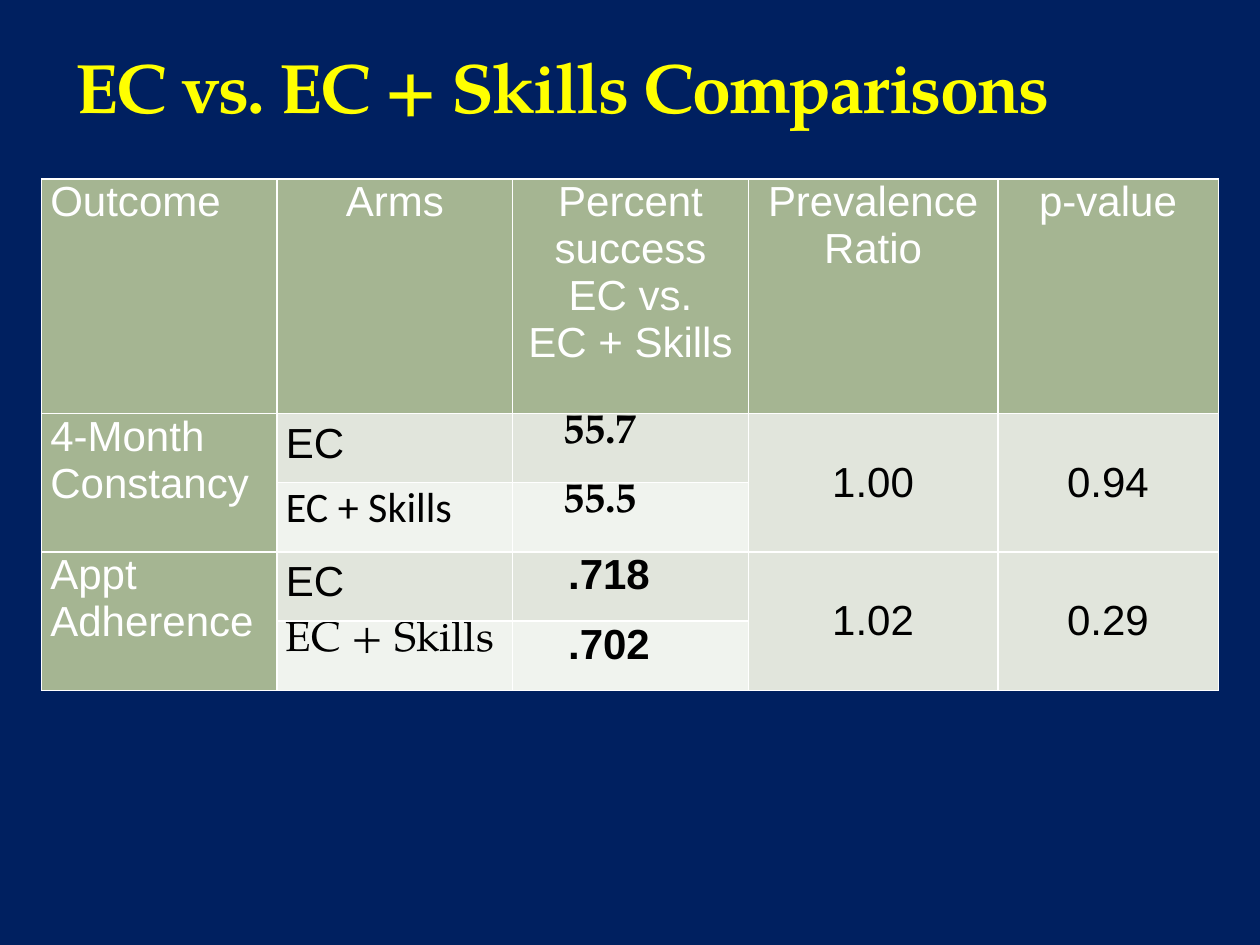
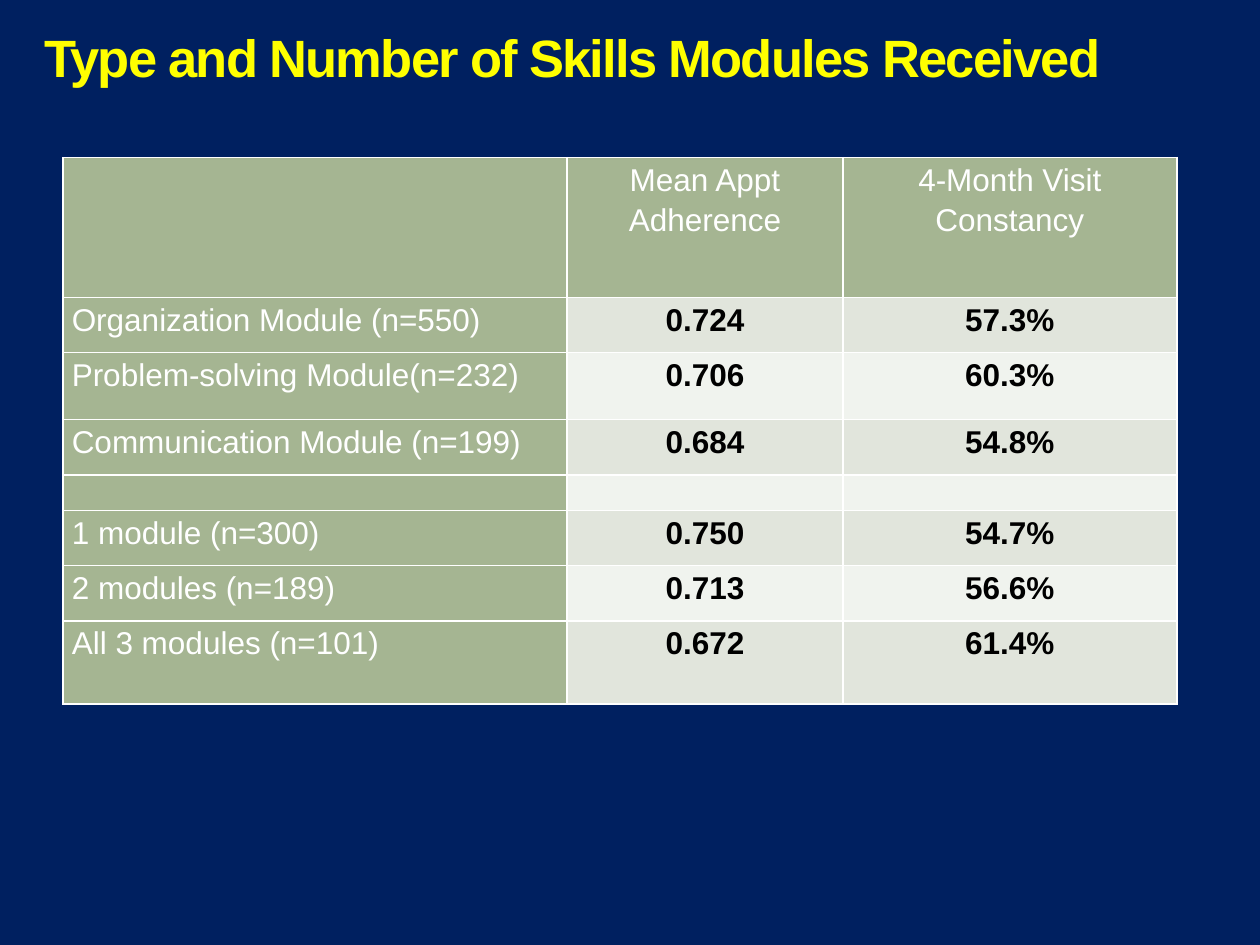
"""Build two slides of result tables on skills training and clinic visits."""
from pptx import Presentation
from pptx.dml.color import RGBColor
from pptx.enum.text import MSO_ANCHOR, MSO_AUTO_SIZE, PP_ALIGN
from pptx.util import Inches, Pt

NAVY = RGBColor(0x00, 0x20, 0x60)
YELLOW = RGBColor(0xFF, 0xFF, 0x00)
WHITE = RGBColor(0xFF, 0xFF, 0xFF)
BLACK = RGBColor(0x00, 0x00, 0x00)
SAGE = RGBColor(0xA5, 0xB5, 0x92)
BANDS = (RGBColor(0xF0, 0xF3, 0xEE), RGBColor(0xE1, 0xE5, 0xDC))
SANS, SERIF, HUMANIST = "Arial", "TeX Gyre Pagella", "Calibri"
LEFT, CENTER = PP_ALIGN.LEFT, PP_ALIGN.CENTER
TOP, MIDDLE, BOTTOM = MSO_ANCHOR.TOP, MSO_ANCHOR.MIDDLE, MSO_ANCHOR.BOTTOM
NO_AUTOFIT = MSO_AUTO_SIZE.NONE


def add_titled_slide(title_text, box, font_name, size, bottom_margin):
    slide = presentation.slides.add_slide(presentation.slide_layouts[5])
    title = slide.shapes.title
    title.left, title.top, title.width, title.height = map(Inches, box)
    frame = title.text_frame
    frame.text = title_text
    frame.word_wrap = True
    frame.auto_size = NO_AUTOFIT
    frame.vertical_anchor = BOTTOM
    frame.margin_bottom = Inches(bottom_margin)
    paragraph = frame.paragraphs[0]
    paragraph.alignment = LEFT
    font = paragraph.font
    font.name, font.size, font.bold = font_name, Pt(size), True
    font.color.rgb = YELLOW
    paragraph.runs[0].font._element.set("spc", "-100")
    return slide


def add_result_table(slide, left, top, widths, heights, rows, size, line_spacing, bold_values):
    frame = slide.shapes.add_table(len(heights), len(widths), Inches(left), Inches(top),
                                   Inches(sum(widths)), Inches(sum(heights)))
    table = frame.table
    table.first_col = True
    for column, width in zip(table.columns, widths):
        column.width = Inches(width)
    for row_index, (height, texts) in enumerate(zip(heights, rows)):
        table.rows[row_index].height = Inches(height)
        for column_index, text in enumerate(texts):
            cell = table.cell(row_index, column_index)
            is_heading = row_index == 0 or column_index == 0
            cell.text = text
            cell.margin_left = cell.margin_right = Inches(0.07)
            cell.margin_top = cell.margin_bottom = 0
            cell.vertical_anchor = TOP
            cell.fill.solid()
            cell.fill.fore_color.rgb = SAGE if is_heading else BANDS[row_index % 2]
            for paragraph in cell.text_frame.paragraphs:
                paragraph.alignment = CENTER if column_index else LEFT
                paragraph.line_spacing = line_spacing
                font = paragraph.font
                font.name, font.size = SANS, Pt(size)
                font.bold = bold_values and not is_heading
                font.color.rgb = WHITE if is_heading else BLACK
    return table


presentation = Presentation()
presentation.slide_width, presentation.slide_height = Inches(10), Inches(7.5)
background = presentation.slide_master.background.fill
background.solid()
background.fore_color.rgb = NAVY

comparison_slide = add_titled_slide("EC vs. EC + Skills Comparisons", (0.5, 0.33, 9, 0.73),
                                    SERIF, 40, 0.05)
comparison_rows = [
    ("Outcome", "Arms", "Percent success\nEC vs.\nEC + Skills", "Prevalence Ratio", "p-value"),
    ("4-Month Constancy", "EC", "55.7", "1.00", "0.94"),
    ("", "EC + Skills", "55.5", "", ""),
    ("Appt Adherence", "EC", ".718", "1.02", "0.29"),
    ("", "EC + Skills", ".702", "", ""),
]
comparison = add_result_table(comparison_slide, 0.33, 1.42, [1.87] * 3 + [1.98, 1.75],
                              [1.86] + [0.55] * 4, comparison_rows, 24, 1, False)
arm_fonts = (SANS, HUMANIST, SANS, SERIF)
percent_fonts = (SERIF, SERIF, SANS, SANS)
for row_index, (arm_font, percent_font) in enumerate(zip(arm_fonts, percent_fonts), start=1):
    arm = comparison.cell(row_index, 1).text_frame.paragraphs[0]
    arm.alignment = LEFT
    arm.font.name = arm_font
    arm.line_spacing = 1.15 if row_index % 2 else 1
    percent_cell = comparison.cell(row_index, 2)
    percent_cell.margin_left = Inches(0.4 if percent_font == SERIF else 0.44)
    percent = percent_cell.text_frame.paragraphs[0]
    percent.alignment = LEFT
    percent.font.name, percent.font.bold = percent_font, True
for row_index in (1, 3):
    for column_index in (0, 3, 4):
        cell = comparison.cell(row_index, column_index)
        cell.merge(comparison.cell(row_index + 1, column_index))
        cell.vertical_anchor = MIDDLE if column_index else TOP

module_slide = add_titled_slide("Type and Number of Skills Modules Received",
                                (0.25, 0.33, 9.42, 0.92), SANS, 30, 0.55)
module_rows = [
    ("", "Mean Appt Adherence", "4-Month Visit Constancy"),
    ("Organization Module (n=550)", "0.724", "57.3%"),
    ("Problem-solving Module(n=232)", "0.706", "60.3%"),
    ("Communication Module (n=199)", "0.684", "54.8%"),
    ("", "", ""),
    ("1 module (n=300)", "0.750", "54.7%"),
    ("2 modules (n=189)", "0.713", "56.6%"),
    ("All 3 modules (n=101)", "0.672", "61.4%"),
]
add_result_table(module_slide, 0.5, 1.25, [4, 2.19, 2.65],
                 [1.11, 0.44, 0.53, 0.44, 0.28, 0.44, 0.44, 0.66],
                 module_rows, 18, 1.15, True)

presentation.save("out.pptx")
